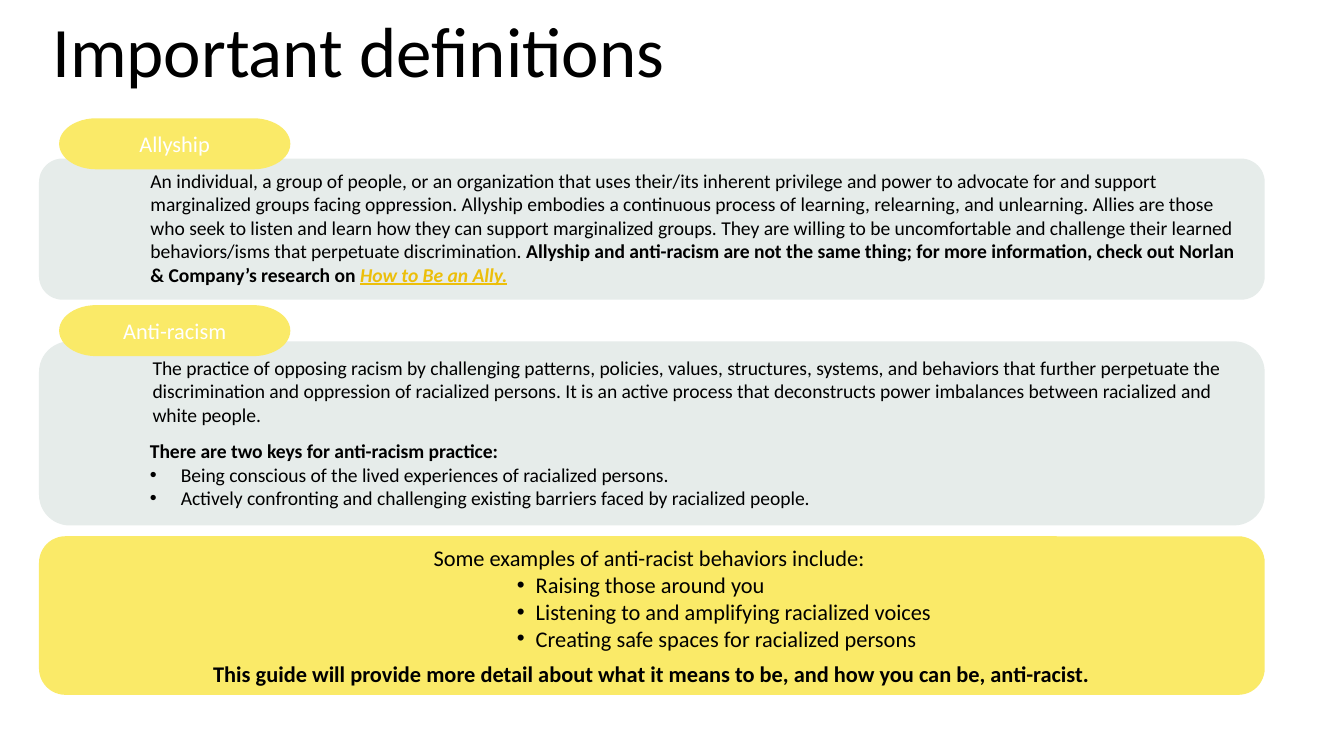
import pptx
import pptx.util
from lxml import etree
from pptx.dml.color import RGBColor
from pptx.enum.shapes import MSO_SHAPE
from pptx.enum.text import MSO_ANCHOR, PP_ALIGN
from pptx.oxml.ns import qn
from pptx.util import Inches, Pt

COLORS = {
    "yellow": "FAEA68",
    "gray": "E6ECEA",
    "black": "000000",
    "white": "FFFFFF",
    "link": "ECBF0B",
}
FONT = "Calibri"
LEFT, WIDTH = 0.29, 9.12


def color(name):
    return RGBColor.from_string(COLORS[name])


def add_panel(s, kind, fill, x, y, w, h, anchor=MSO_ANCHOR.MIDDLE):
    """Add a filled shape without a line and return its text frame."""
    sp = s.shapes.add_shape(kind, Inches(x), Inches(y), Inches(w), Inches(h))
    sp.shadow.inherit = False
    sp.fill.solid()
    sp.fill.fore_color.rgb = color(fill)
    sp.line.fill.background()
    tf = sp.text_frame
    tf.word_wrap = True
    tf.vertical_anchor = anchor
    return tf


def add_text(tf, text, size, font_color="black", align=PP_ALIGN.LEFT,
             margin=0, indent=0, bullet=False, bold=None, before=0):
    """Write one paragraph, using the first one while it is empty."""
    p = tf.paragraphs[0] if not tf.text else tf.add_paragraph()
    p.alignment = align
    p_pr = p._p.get_or_add_pPr()
    if margin:
        p_pr.set("marL", str(Inches(margin)))
        p_pr.set("indent", str(Inches(indent)))
    if before:
        p.space_before = Pt(before)
    if bullet:
        etree.SubElement(p_pr, qn("a:buFont")).set("typeface", "Arial")
        etree.SubElement(p_pr, qn("a:buChar")).set("char", "•")
    p.font.name = FONT
    p.font.size = Pt(size)
    p.font.color.rgb = color(font_color)
    p.font.bold = bold
    p.add_run().text = text
    return p


def add_bold_run(p, text):
    r = p.add_run()
    r.text = text
    r.font.bold = True
    return r


def add_title(s, text):
    box = s.shapes.add_textbox(Inches(LEFT), Inches(0.12), Inches(WIDTH), Inches(0.93))
    tf = box.text_frame
    tf.word_wrap = True
    tf.margin_top = 0
    add_text(tf, text, 38).line_spacing = 0.9


def add_definition(s, y, h):
    return add_panel(s, MSO_SHAPE.ROUNDED_RECTANGLE, "gray", LEFT, y, WIDTH, h,
                     MSO_ANCHOR.BOTTOM)


def add_term(s, text, y):
    tf = add_panel(s, MSO_SHAPE.FLOWCHART_TERMINATOR, "yellow", 0.44, y, 1.72, 0.38)
    add_text(tf, text, 12, "white", PP_ALIGN.CENTER)


def main():
    prs = pptx.Presentation()
    prs.slide_width = Inches(10)
    prs.slide_height = prs.slide_width * 9 // 16
    s = prs.slides.add_slide(prs.slide_layouts[6])

    # Examples of behaviors
    tf = add_panel(s, MSO_SHAPE.ROUNDED_RECTANGLE, "yellow", LEFT, 3.99, WIDTH, 1.18)
    add_text(tf, "Some examples of anti-racist behaviors include: ", 12,
             align=PP_ALIGN.CENTER)
    for text in ("Raising those around you",
                 "Listening to and amplifying racialized voices",
                 "Creating safe spaces for racialized persons"):
        add_text(tf, text, 12, margin=3.54, indent=-0.14, bullet=True)
    add_text(tf, "This guide will provide more detail about what it means to be, "
             "and how you can be, anti-racist.", 12, align=PP_ALIGN.CENTER,
             bold=True, before=4.5)

    add_title(s, "Important definitions")

    # Anti-racism
    tf = add_definition(s, 2.54, 1.37)
    add_text(tf, "The practice of opposing racism by challenging patterns, policies, "
             "values, structures, systems, and behaviors that further perpetuate the "
             "discrimination and oppression of racialized persons. It is an active "
             "process that deconstructs power imbalances between racialized and "
             "white people.", 10.5, margin=0.68)
    add_text(tf, "There are two keys for anti-racism practice:", 10.5,
             margin=0.89, indent=-0.23, bold=True, before=7)
    for text in ("Being conscious of the lived experiences of racialized persons.",
                 "Actively confronting and challenging existing barriers faced by "
                 "racialized people."):
        add_text(tf, text, 10.5, margin=0.89, indent=-0.23, bullet=True)
    add_term(s, "Anti-racism", 2.27)

    # Allyship
    tf = add_definition(s, 1.18, 1.05)
    p = add_text(tf, "An individual, a group of people, or an organization that uses "
                 "their/its inherent privilege and power to advocate for and support "
                 "marginalized groups facing oppression. Allyship embodies a continuous "
                 "process of learning, relearning, and unlearning. Allies are those who "
                 "seek to listen and learn how they can support marginalized groups. "
                 "They are willing to be uncomfortable and challenge their learned "
                 "behaviors/isms that perpetuate discrimination. ", 10.5, margin=0.68)
    add_bold_run(p, "Allyship and anti-racism are not the same thing; for more "
                 "information, check out Norlan & Company’s research on ")
    r = add_bold_run(p, "How to Be an Ally.")
    r.font.italic = True
    r.font.underline = True
    r.font.color.rgb = color("link")
    add_term(s, "Allyship", 0.88)

    prs.save("out.pptx")


if __name__ == "__main__":
    main()
